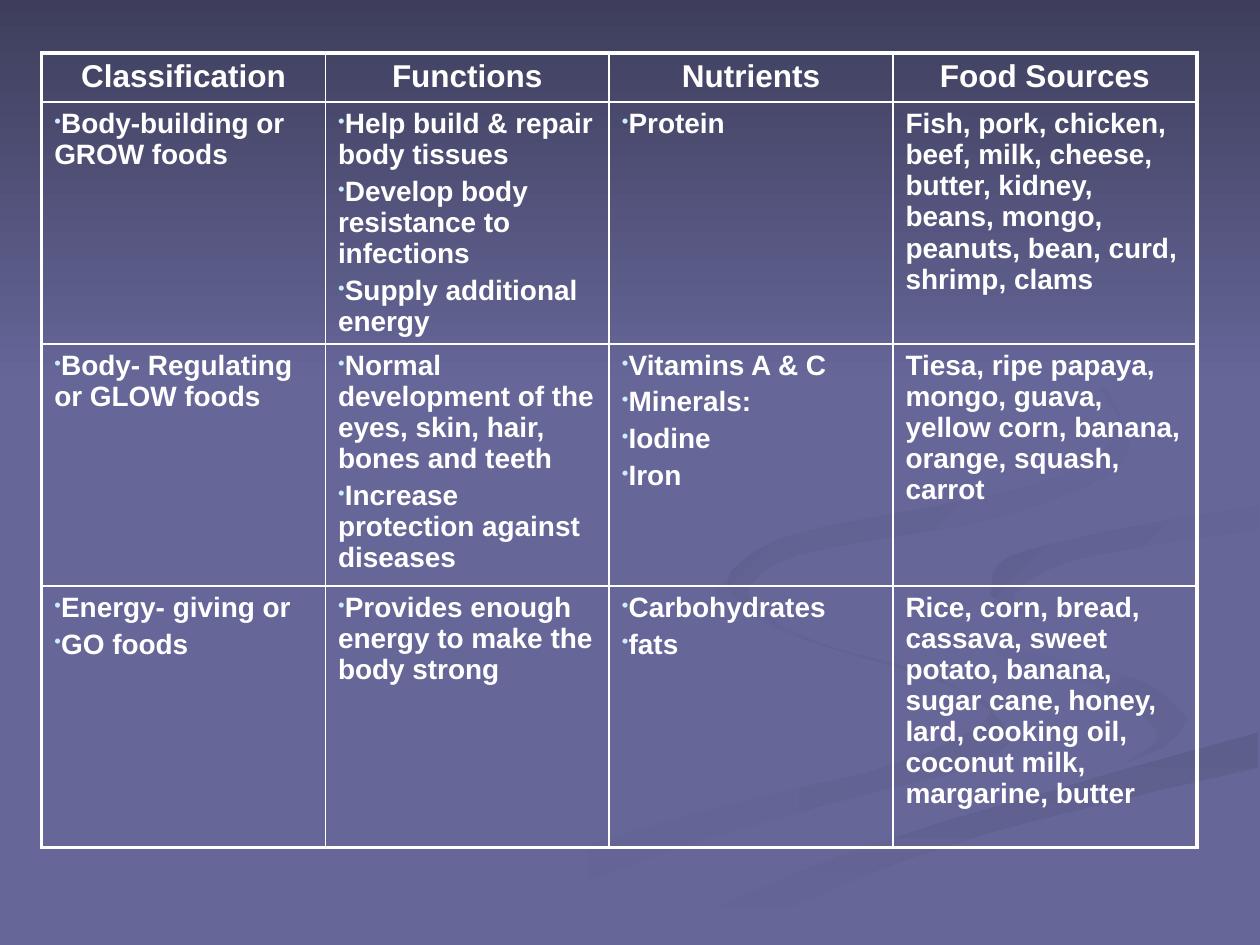
import dataclasses
import typing

import lxml.etree
import pptx
import pptx.dml.color
import pptx.enum.text
import pptx.oxml.ns
import pptx.util

Cm = pptx.util.Cm
Pt = pptx.util.Pt
RGBColor = pptx.dml.color.RGBColor
qn = pptx.oxml.ns.qn
ALIGN = pptx.enum.text.PP_ALIGN
Edge = list[tuple[float, float]]

BASE = RGBColor(0x66, 0x66, 0x99)
NIGHT = RGBColor(0x3E, 0x3E, 0x5C)
SHADE = RGBColor(0x62, 0x62, 0x93)
DEEP = RGBColor(0x5E, 0x5E, 0x8C)
DUSK = RGBColor(0x60, 0x60, 0x91)
SMOKE = RGBColor(0x5F, 0x5F, 0x8E)
WHITE = RGBColor(0xFF, 0xFF, 0xFF)
ICE = RGBColor(0xCC, 0xEC, 0xFF)

THIN, THICK = 1, 2.25
STEPS = 5  # short lines between two knots of an edge
UNIT = Cm(0.0254)  # ribbon knots are hundredths of an inch


@dataclasses.dataclass
class Ribbon:
    start: RGBColor
    end: RGBColor
    angle: int  # clockwise
    edges: list[Edge]


@dataclasses.dataclass
class Entry:
    lines: list[str]
    dots: bool = True
    head: bool = False


# Edges shared by neighbouring ribbons
SWEEP = [(999, 581), (797, 638), (662, 681), (503, 749)]
BEND = [(943, 570), (905, 540), (811, 515), (745, 490), (725, 464)]
CURL = [(999, 402), (899, 418), (800, 442), (786, 473)]

RIBBONS = [
    Ribbon(BASE, SHADE, 0, [
        [(575, 459), (572, 476), (631, 505), (741, 539), (786, 566),
         (714, 605), (539, 649), (417, 690), (300, 749)],
        [(361, 749), (499, 687), (651, 640), (769, 609), (800, 581),
         (745, 538), (642, 507), (575, 459)]]),
    Ribbon(BASE, SHADE, 45, [
        BEND,
        [(725, 464), (755, 505), (868, 544), (918, 581), (894, 605)],
        [(894, 605), (932, 589), (943, 570)]]),
    Ribbon(DEEP, BASE, 90, [
        SWEEP, [(571, 749), (649, 710), (785, 661), (999, 609)]]),
    Ribbon(BASE, BASE, 0, [
        [(477, 749), (619, 684), (780, 634), (911, 600), (943, 570)],
        BEND,
        [(725, 464), (755, 432), (874, 408), (999, 387)],
        CURL, [(786, 473), (866, 509), (999, 538)], SWEEP]),
    Ribbon(DUSK, BASE, 45, [
        CURL, [(786, 473), (826, 496)],
        [(826, 496), (805, 472), (859, 443), (999, 420)]]),
    Ribbon(SMOKE, BASE, 45, [
        [(683, 430), (786, 412), (876, 378), (894, 344), (843, 275),
         (762, 233)],
        [(762, 233), (846, 279), (889, 335), (842, 378), (733, 404),
         (625, 426), (577, 462), (622, 500)],
        [(622, 500), (593, 470), (624, 444), (683, 430)]]),
    # Dark band along the top
    Ribbon(NIGHT, BASE, 90, [[(0, 0), (1000, 0)], [(1000, 308), (0, 308)]]),
]

COLS = [5.72, 5.72, 5.72, 6.13]
ROWS = [0.99, 3.81, 4.88, 5.28]
HEADS = ["Classification", "Functions", "Nutrients", "Food Sources"]
GRID = [
    [Entry([name], dots=False, head=True) for name in HEADS],
    [Entry(["Body-building or GROW foods"]),
     Entry(["Help build & repair body tissues",
            "Develop body resistance to infections",
            "Supply additional energy"]),
     Entry(["Protein"]),
     Entry(["Fish, pork, chicken, beef, milk, cheese, butter, kidney, beans, "
            "mongo, peanuts, bean, curd, shrimp, clams"], dots=False)],
    [Entry(["Body- Regulating or GLOW foods"]),
     Entry(["Normal development of the eyes, skin, hair, bones and teeth",
            "Increase protection against diseases"]),
     Entry(["Vitamins A & C", "Minerals:", "Iodine", "Iron"]),
     Entry(["Tiesa, ripe papaya, mongo, guava, yellow corn, banana, orange, "
            "squash, carrot"], dots=False)],
    [Entry(["Energy- giving or", "GO foods"]),
     Entry(["Provides enough energy to make the body strong"]),
     Entry(["Carbohydrates", "fats"]),
     Entry(["Rice, corn, bread, cassava, sweet potato, banana, sugar cane, "
            "honey, lard, cooking oil, coconut milk, margarine, butter"],
           dots=False)],
]


def style(item: typing.Any, form: dict[str, typing.Any]) -> None:
    for key, val in form.items():
        setattr(item, key, val)


def smooth(edge: Edge) -> Edge:
    """Run a Catmull-Rom curve through the knots of an edge."""
    knots = [edge[0], *edge, edge[-1]]
    curve = [edge[0]]
    for a, b, c, d in zip(knots, knots[1:], knots[2:], knots[3:]):
        for step in range(1, STEPS + 1):
            t = step / STEPS
            x, y = (q + ((r - p) * t + (2 * p - 5 * q + 4 * r - s) * t ** 2
                         + (3 * q - p - 3 * r + s) * t ** 3) / 2
                    for p, q, r, s in zip(a, b, c, d))
            curve.append((x, y))
    return curve


def add_ribbon(slide: typing.Any, band: Ribbon) -> None:
    points = [point for edge in band.edges for point in smooth(edge)]
    pen = slide.shapes.build_freeform(*points[0], scale=float(UNIT))
    pen.add_line_segments(points[1:], close=True)
    shape = pen.convert_to_shape()
    shape.shadow.inherit = False
    shape.line.fill.background()
    if band.start == band.end:
        shape.fill.solid()
        shape.fill.fore_color.rgb = band.start
        return
    shape.fill.gradient()
    shape.fill.gradient_angle = (360 - band.angle) % 360
    for stop, place, hue in zip(shape.fill.gradient_stops, (0, 1),
                                (band.start, band.end)):
        stop.position = place
        stop.color.rgb = hue


def add_edge(cell: typing.Any, side: str, width: float) -> None:
    props = cell._tc.get_or_add_tcPr()
    line = lxml.etree.SubElement(props, qn("a:ln" + side), w=str(Pt(width)))
    fill = lxml.etree.SubElement(line, qn("a:solidFill"))
    lxml.etree.SubElement(fill, qn("a:srgbClr"), val=str(WHITE))


def add_dot(para: typing.Any) -> None:
    props = para._p.get_or_add_pPr()
    for key in ("marL", "indent"):
        props.set(key, "0")
    hue = lxml.etree.SubElement(props, qn("a:buClr"))
    lxml.etree.SubElement(hue, qn("a:srgbClr"), val=str(ICE))
    lxml.etree.SubElement(props, qn("a:buSzPct"), val="70000")
    lxml.etree.SubElement(props, qn("a:buChar"), char="•")


def fill_cell(cell: typing.Any, entry: Entry) -> None:
    size = 18 if entry.head else 16
    cell.text = "\n".join(entry.lines)
    for para in cell.text_frame.paragraphs:
        style(para, {"alignment": ALIGN.CENTER if entry.head else ALIGN.LEFT,
                     "space_before": Pt(size * 0.2)})
        font = para.runs[0].font
        style(font, {"name": "Arial", "size": Pt(size), "bold": True})
        font.color.rgb = WHITE
        if entry.dots:
            add_dot(para)


def add_grid(slide: typing.Any) -> None:
    table = slide.shapes.add_table(len(ROWS), len(COLS), Cm(0.84), Cm(1.07),
                                   Cm(sum(COLS)), Cm(16.71)).table
    style(table, {"first_row": False, "horz_banding": False})
    for col, width in zip(table.columns, COLS):
        col.width = Cm(width)
    for row, height in zip(table.rows, ROWS):
        row.height = Cm(height)
    for r, line in enumerate(GRID):
        for c, entry in enumerate(line):
            cell = table.cell(r, c)
            outer = {"L": c == 0, "R": c == len(COLS) - 1,
                     "T": r == 0, "B": r == len(ROWS) - 1}
            for side, rim in outer.items():
                add_edge(cell, side, THICK if rim else THIN)
            cell.fill.background()
            fill_cell(cell, entry)


def main() -> None:
    deck = pptx.Presentation()
    style(deck, {"slide_width": Cm(25.4), "slide_height": Cm(19.05)})
    slide = deck.slides.add_slide(deck.slide_layouts[6])

    # Backdrop
    slide.background.fill.solid()
    slide.background.fill.fore_color.rgb = BASE
    for band in RIBBONS:
        add_ribbon(slide, band)

    # Food table
    add_grid(slide)
    deck.save("out.pptx")


if __name__ == "__main__":
    main()
